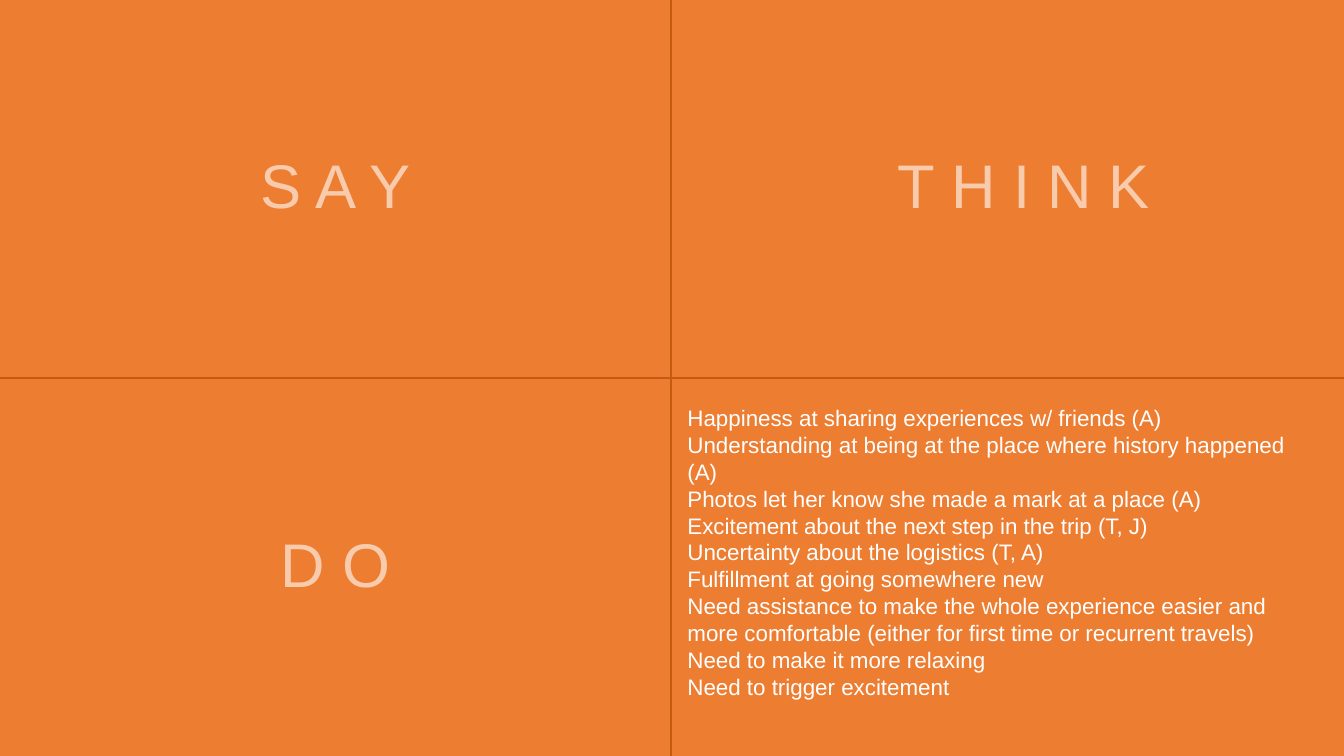
"""Build an empathy map slide with four quadrants."""
from lxml.etree import SubElement
from pptx import Presentation
from pptx.dml.color import RGBColor
from pptx.enum.shapes import MSO_CONNECTOR
from pptx.enum.text import MSO_ANCHOR, MSO_AUTO_SIZE, PP_ALIGN
from pptx.oxml.ns import qn
from pptx.util import Cm, Pt

COLOURS = {"background": "ED7D31", "heading": "F8CBAD", "divider": "C55A11", "feelings": "FFFFFF"}
WIDTH, HEIGHT = 33.87, 19.05
FEELINGS = [
    "Happiness at sharing experiences w/ friends (A)",
    "Understanding at being at the place where history happened (A)",
    "Photos let her know she made a mark at a place (A)",
    "Excitement about the next step in the trip (T, J)",
    "Uncertainty about the logistics (T, A)",
    "Fulfillment at going somewhere new",
    "Need assistance to make the whole experience easier and more comfortable "
    "(either for first time or recurrent travels)",
    "Need to make it more relaxing",
    "Need to trigger excitement",
]


def place(box, left, top, width, height):
    box.left, box.top, box.width, box.height = Cm(left), Cm(top), Cm(width), Cm(height)
    box.text_frame.word_wrap = True
    box.text_frame.auto_size = MSO_AUTO_SIZE.NONE


def style(para, size, colour, align, spacing):
    para.font.name, para.font.size = "Arial", Pt(size)
    para.font.color.rgb = RGBColor.from_string(COLOURS[colour])
    para.alignment, para.line_spacing = align, spacing
    para.space_before = Pt(0)


deck = Presentation()
deck.slide_width, deck.slide_height = Cm(WIDTH), Cm(HEIGHT)
page = deck.slides.add_slide(deck.slide_layouts[1])
page.background.fill.solid()
page.background.fill.fore_color.rgb = RGBColor.from_string(COLOURS["background"])

headings = [("S A Y", 5.92, 2.92, 5.08), ("T H I N K", 22, 2.92, 7.62), ("D O", 5.92, 12.45, 5.08)]
for word, left, top, width in headings:
    box = page.shapes.title if word == "S A Y" else page.shapes.add_textbox(0, 0, 0, 0)
    place(box, left, top, width, 3.68)
    box.text_frame.vertical_anchor = MSO_ANCHOR.MIDDLE
    box.text_frame.text = word
    style(box.text_frame.paragraphs[0], 44, "heading", PP_ALIGN.CENTER, 0.9)

middle_x, middle_y = 16.92, HEIGHT / 2
for ends in [(middle_x, 0, middle_x, HEIGHT), (0, middle_y, WIDTH, middle_y)]:
    divider = page.shapes.add_connector(MSO_CONNECTOR.STRAIGHT, *map(Cm, ends))
    divider.line.color.rgb = RGBColor.from_string(COLOURS["divider"])
    divider.line.width = Pt(1.5)
    SubElement(divider.element.spPr, qn("a:effectLst"))

feelings = page.placeholders[1]
place(feelings, 17.07, 10.06, 16.41, 8.98)
feelings.text_frame.vertical_anchor = MSO_ANCHOR.TOP
feelings.text_frame.text = "\n".join(FEELINGS)
for para in feelings.text_frame.paragraphs:
    style(para, 16, "feelings", PP_ALIGN.LEFT, 1.0)
    properties = para._p.get_or_add_pPr()
    properties.set("marL", "0")
    properties.set("indent", "0")
    bullet = SubElement(properties, qn("a:buNone"))
    properties.find(qn("a:defRPr")).addprevious(bullet)

deck.save("out.pptx")
